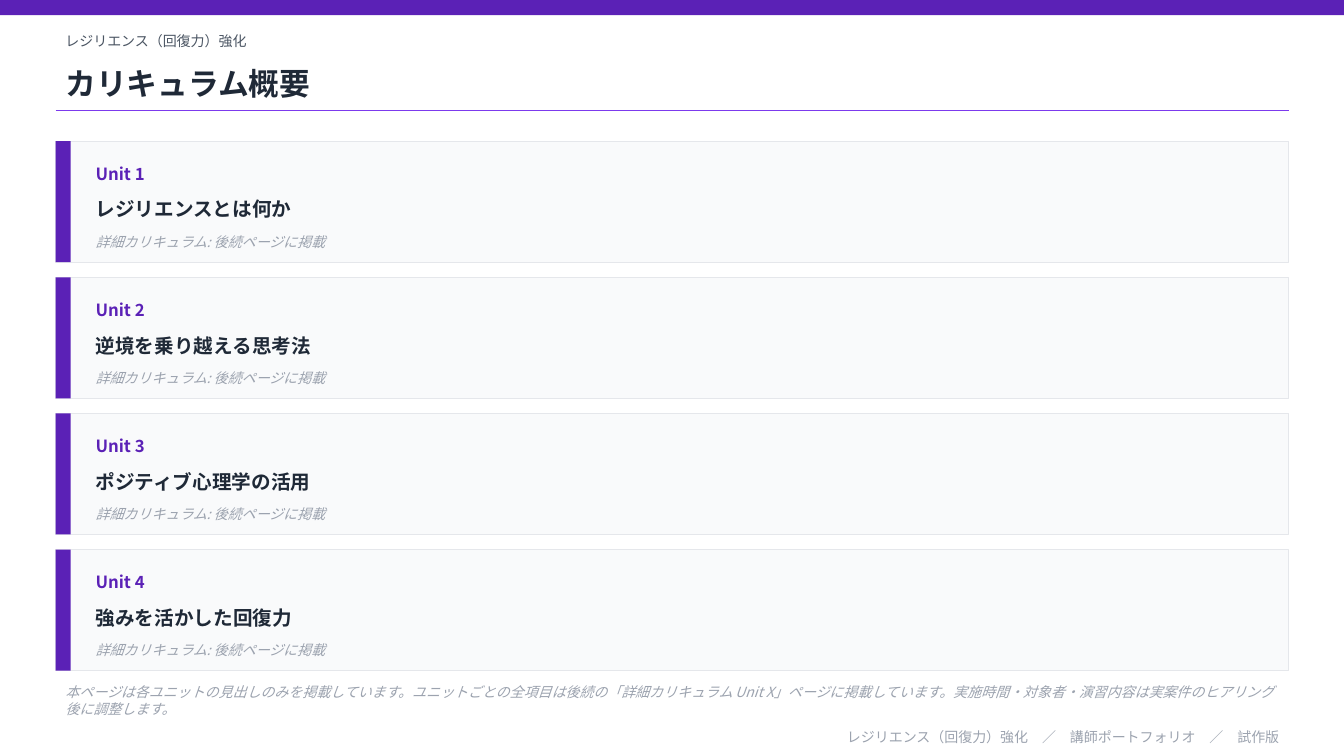
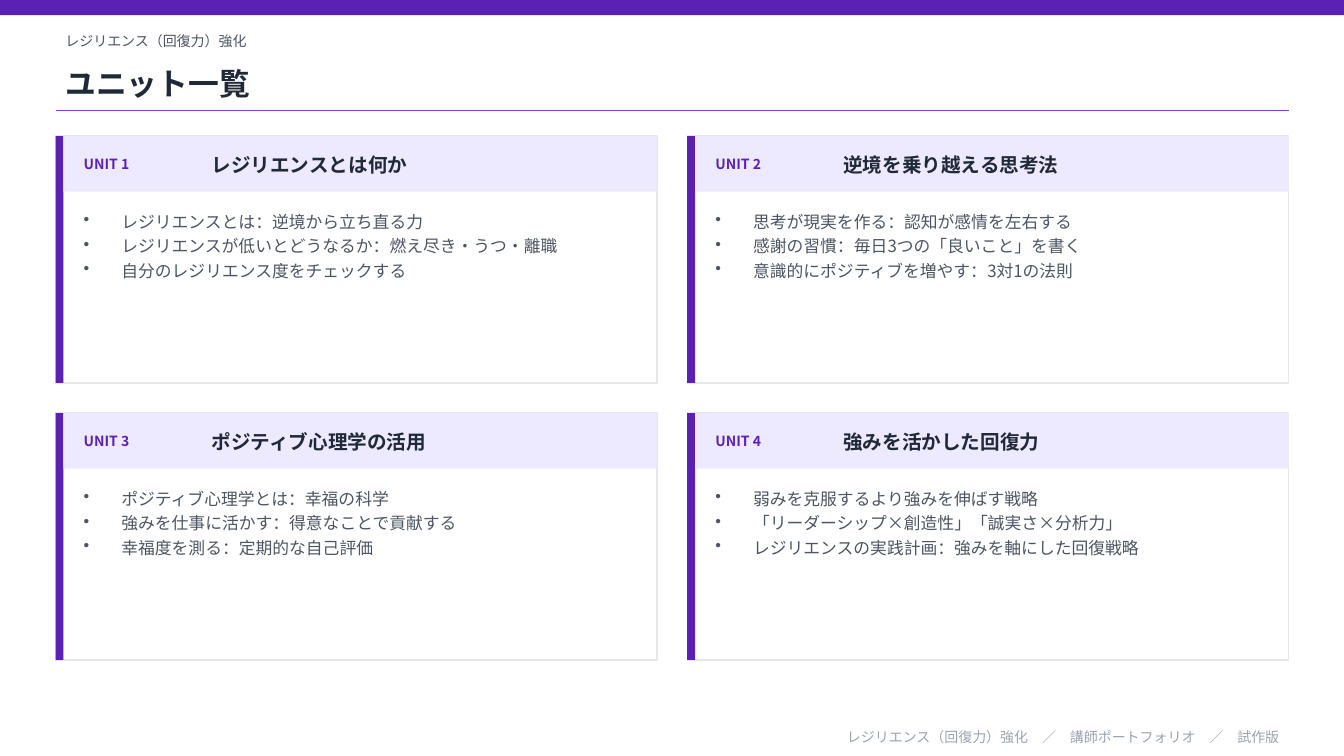
import pptx
import pptx.dml.color
import pptx.enum.shapes
import pptx.enum.text
import pptx.oxml.ns
import pptx.util
from lxml import etree

Cm = pptx.util.Cm
Pt = pptx.util.Pt
RGB = pptx.dml.color.RGBColor
qn = pptx.oxml.ns.qn
ALIGN = pptx.enum.text.PP_ALIGN
ANCHOR = pptx.enum.text.MSO_ANCHOR

FONT = "Noto Sans CJK JP"
COLORS = {
    "primary": "5B21B6",
    "accent": "7C3AED",
    "tint": "EDE9FE",
    "ink": "1F2937",
    "body": "4B5563",
    "muted": "9CA3AF",
    "border": "E5E7EB",
    "panel": "F9FAFB",
    "white": "FFFFFF",
}
COURSE = "レジリエンス（回復力）強化"
FOOTER = COURSE + "　／　講師ポートフォリオ　／　試作版"
UNITS = [
    ("レジリエンスとは何か", [
        "レジリエンスとは：逆境から立ち直る力",
        "レジリエンスが低いとどうなるか：燃え尽き・うつ・離職",
        "自分のレジリエンス度をチェックする",
    ]),
    ("逆境を乗り越える思考法", [
        "思考が現実を作る：認知が感情を左右する",
        "感謝の習慣：毎日3つの「良いこと」を書く",
        "意識的にポジティブを増やす：3対1の法則",
    ]),
    ("ポジティブ心理学の活用", [
        "ポジティブ心理学とは：幸福の科学",
        "強みを仕事に活かす：得意なことで貢献する",
        "幸福度を測る：定期的な自己評価",
    ]),
    ("強みを活かした回復力", [
        "弱みを克服するより強みを伸ばす戦略",
        "「リーダーシップ×創造性」「誠実さ×分析力」",
        "レジリエンスの実践計画：強みを軸にした回復戦略",
    ]),
]

SLIDE_WIDTH, SLIDE_HEIGHT = 33.87, 19.05
LEFT, CONTENT_WIDTH = 1.4, 31.08


def add_text(slide, text, left, top, width, height, size=10, color="ink", bold=False,
             italic=False, align=ALIGN.LEFT, anchor=ANCHOR.MIDDLE, bullet=None):
    frame = slide.shapes.add_textbox(Cm(left), Cm(top), Cm(width), Cm(height)).text_frame
    frame.word_wrap = True
    frame.vertical_anchor = anchor
    for index, line in enumerate(text.split("\n")):
        paragraph = frame.add_paragraph() if index else frame.paragraphs[0]
        paragraph.alignment = align
        if bullet:
            properties = paragraph._p.get_or_add_pPr()
            properties.set("marL", str(Cm(0.95)))
            properties.set("indent", str(-Cm(0.95)))
            etree.SubElement(properties, qn("a:buChar")).set("char", bullet)
            paragraph.space_after = Pt(3)
        run = paragraph.add_run()
        run.text = line
        run.font.size = Pt(size)
        run.font.bold = bold
        run.font.italic = italic
        run.font.color.rgb = RGB.from_string(COLORS[color])
        run.font.name = FONT
        east_asian = etree.Element(qn("a:ea"), typeface=FONT)
        run.font._element.find(qn("a:latin")).addnext(east_asian)


def add_block(slide, left, top, width, height, fill, border=0):
    block = slide.shapes.add_shape(pptx.enum.shapes.MSO_SHAPE.RECTANGLE,
                                   Cm(left), Cm(top), Cm(width), Cm(height))
    block.shadow.inherit = False
    block.fill.solid()
    block.fill.fore_color.rgb = RGB.from_string(COLORS[fill])
    if border:
        block.line.color.rgb = RGB.from_string(COLORS["border"])
        block.line.width = Pt(border)
    else:
        block.line.fill.background()


deck = pptx.Presentation()
deck.slide_width, deck.slide_height = Cm(SLIDE_WIDTH), Cm(SLIDE_HEIGHT)

pages = []
for heading in ["カリキュラム概要", "ユニット一覧"]:
    page = deck.slides.add_slide(deck.slide_layouts[6])
    add_block(page, 0, 0, SLIDE_WIDTH, 0.38, "primary")
    add_text(page, COURSE, LEFT, 0.64, CONTENT_WIDTH, 0.76, color="body")
    add_text(page, heading, LEFT, 1.4, CONTENT_WIDTH, 1.4, size=22, bold=True)
    rule = page.shapes.add_connector(pptx.enum.shapes.MSO_CONNECTOR.STRAIGHT, Cm(LEFT), Cm(2.79),
                                     Cm(LEFT + CONTENT_WIDTH), Cm(2.79))
    rule.line.color.rgb = RGB.from_string(COLORS["accent"])
    rule.line.width = Pt(1)
    etree.SubElement(rule._element.spPr, qn("a:effectLst"))
    add_text(page, FOOTER, LEFT, 18.29, CONTENT_WIDTH, 0.56, color="muted", align=ALIGN.RIGHT)
    pages.append(page)

overview, unit_list = pages

ROW_HEIGHT, ROW_GAP = 3.05, 0.38
ROW_TEXT_LEFT, ROW_TEXT_WIDTH = 2.16, 29.79
for index, (title, topics) in enumerate(UNITS):
    top = 3.56 + index * (ROW_HEIGHT + ROW_GAP)
    add_block(overview, LEFT, top, CONTENT_WIDTH, ROW_HEIGHT, "panel", border=0.5)
    add_block(overview, LEFT, top, 0.38, ROW_HEIGHT, "primary")
    add_text(overview, f"Unit {index + 1}", ROW_TEXT_LEFT, top + 0.3, 3.81, 1.02,
             size=12, color="primary", bold=True)
    add_text(overview, title, ROW_TEXT_LEFT, top + 1.14, ROW_TEXT_WIDTH, 1.14, size=14, bold=True)
    add_text(overview, "詳細カリキュラム: 後続ページに掲載", ROW_TEXT_LEFT, top + 2.16,
             ROW_TEXT_WIDTH, 0.76, color="muted", italic=True)
add_text(overview,
         "本ページは各ユニットの見出しのみを掲載しています。"
         "ユニットごとの全項目は後続の「詳細カリキュラム Unit X」ページに掲載しています。"
         "実施時間・対象者・演習内容は実案件のヒアリング後に調整します。",
         LEFT, 17.15, CONTENT_WIDTH, 1.02, color="muted", italic=True)

CARD_GAP, CARD_HEIGHT, EDGE = 0.76, 6.22, 0.2
CARD_WIDTH = (CONTENT_WIDTH - CARD_GAP) / 2
for index, (title, topics) in enumerate(UNITS):
    row, column = divmod(index, 2)
    left = LEFT + column * (CARD_WIDTH + CARD_GAP)
    top = 3.43 + row * (CARD_HEIGHT + CARD_GAP)
    add_block(unit_list, left, top, CARD_WIDTH, CARD_HEIGHT, "white", border=1)
    add_block(unit_list, left, top, EDGE, CARD_HEIGHT, "primary")
    add_block(unit_list, left + EDGE, top, CARD_WIDTH - EDGE, 1.4, "tint")
    add_text(unit_list, f"UNIT {index + 1}", left + 0.46, top + 0.2, 3.05, 1.02,
             color="primary", bold=True)
    add_text(unit_list, title, left + 3.68, top + 0.2, 11.1, 1.02, size=14, bold=True)
    add_text(unit_list, "\n".join(topics), left + 0.46, top + 1.78, 14.25, 4.06,
             size=12, color="body", anchor=ANCHOR.TOP, bullet="•")

deck.save("out.pptx")
